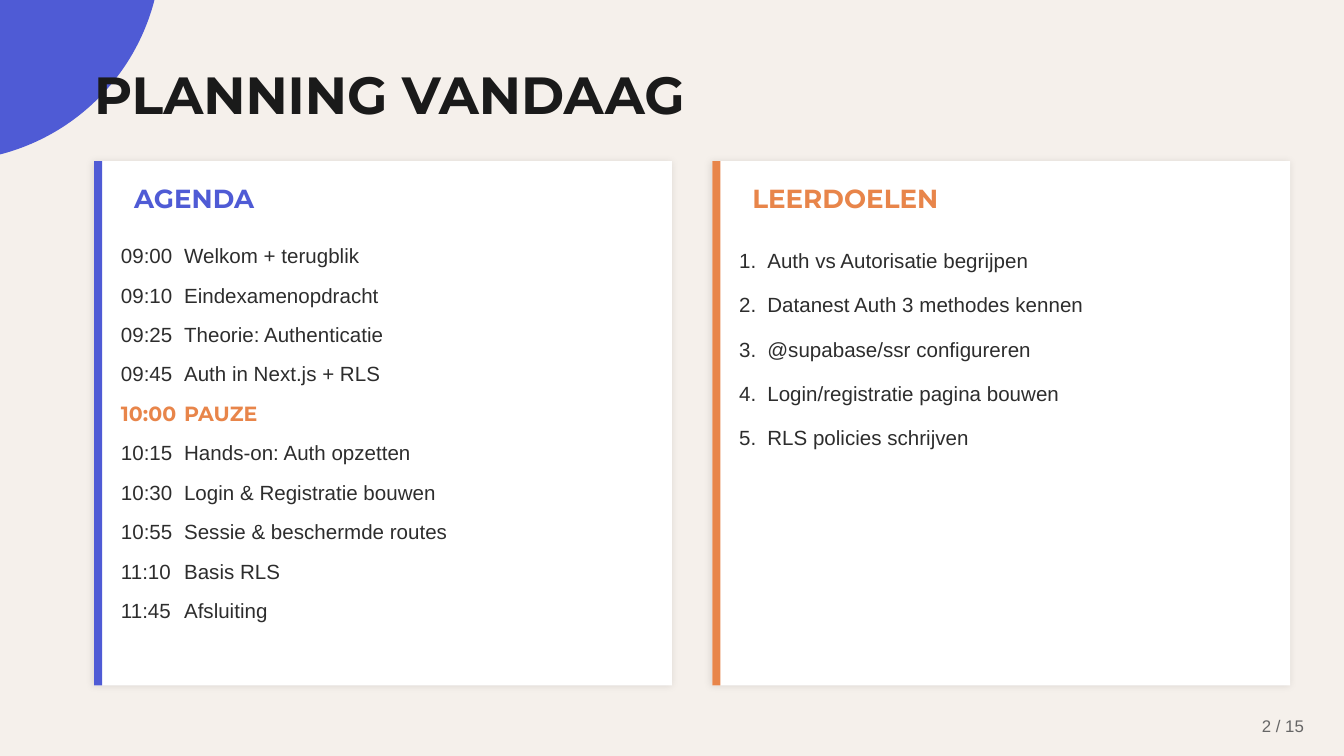
"""Build the day plan slide: an agenda card beside a card of goals."""
from dataclasses import dataclass

from lxml.etree import SubElement
from pptx import Presentation
from pptx.dml.color import RGBColor
from pptx.enum.shapes import MSO_SHAPE
from pptx.enum.text import MSO_ANCHOR, PP_ALIGN
from pptx.oxml.ns import qn
from pptx.shapes.autoshape import Shape
from pptx.slide import Slide
from pptx.text.text import TextFrame, _Paragraph as Para
from pptx.util import Inches, Pt

CELL = Inches(0.1)
CREAM = RGBColor(0xF5, 0xF0, 0xEB)
BLUE = RGBColor(0x4F, 0x5B, 0xD5)
ORANGE = RGBColor(0xE8, 0x85, 0x4A)
WHITE = RGBColor(0xFF, 0xFF, 0xFF)
BLACK = RGBColor(0x1A, 0x1A, 0x1A)
DARK = RGBColor(0x2D, 0x2D, 0x2D)
GRAY = RGBColor(0x66, 0x66, 0x66)


@dataclass(frozen=True)
class Box:
    """A place on the grid, in columns and rows."""
    col: float
    row: float
    wide: float
    high: float

    def span(self) -> list[int]:
        """Return left, top, width and height."""
        return [round(CELL * n) for n in (self.col, self.row, self.wide, self.high)]


@dataclass(frozen=True)
class Font:
    """The look of a run."""
    name: str
    size: float
    color: RGBColor
    bold: bool = False


@dataclass(frozen=True)
class Line:
    """One row of a list: its mark, its words and its font."""
    mark: str
    words: str
    font: Font = Font("Arial", 11, DARK)


@dataclass(frozen=True)
class Card:
    """A titled list with a coloured edge."""
    col: float
    title: str
    color: RGBColor
    lines: list[Line]
    tab: float
    pitch: float


PAUSE = Font("Montserrat", 11, ORANGE, True)
CARDS = [
    Card(7, "AGENDA", BLUE, [
        Line("09:00", "Welkom + terugblik"),
        Line("09:10", "Eindexamenopdracht"),
        Line("09:25", "Theorie: Authenticatie"),
        Line("09:45", "Auth in Next.js + RLS"),
        Line("10:00", "PAUZE", PAUSE),
        Line("10:15", "Hands-on: Auth opzetten"),
        Line("10:30", "Login & Registratie bouwen"),
        Line("10:55", "Sessie & beschermde routes"),
        Line("11:10", "Basis RLS"),
        Line("11:45", "Afsluiting"),
    ], 4.7, 1.6),
    Card(53, "LEERDOELEN", ORANGE, [
        Line(f"{rank}.", words) for rank, words in enumerate([
            "Auth vs Autorisatie begrijpen",
            "Datanest Auth 3 methodes kennen",
            "@supabase/ssr configureren",
            "Login/registratie pagina bouwen",
            "RLS policies schrijven",
        ], 1)
    ], 2.1, 1.8),
]


def add_block(slide: Slide, kind: MSO_SHAPE, box: Box, color: RGBColor) -> Shape:
    """Draw a plain filled shape."""
    shape = slide.shapes.add_shape(kind, *box.span())
    shape.shadow.inherit = False
    shape.fill.solid()
    shape.fill.fore_color.rgb = color
    shape.line.fill.background()
    return shape


def add_shade(shape: Shape) -> None:
    """Give a shape a soft outer shadow."""
    effects = shape._element.spPr.find(qn("a:effectLst"))
    shade = SubElement(effects, qn("a:outerShdw"), blurRad=str(Pt(4)), dist=str(Pt(1)),
                       dir=str(135 * 60000), algn="bl", rotWithShape="0")
    tint = SubElement(shade, qn("a:srgbClr"), val="000000")
    SubElement(tint, qn("a:alpha"), val="10000")


def add_frame(slide: Slide, box: Box, flush: bool = False,
              anchor: MSO_ANCHOR = MSO_ANCHOR.MIDDLE) -> TextFrame:
    """Add an empty text box that wraps."""
    frame = slide.shapes.add_textbox(*box.span()).text_frame
    frame.word_wrap = True
    frame.vertical_anchor = anchor
    if flush:
        frame.margin_left = frame.margin_right = 0
        frame.margin_top = frame.margin_bottom = 0
    return frame


def add_run(para: Para, text: str, font: Font) -> None:
    """Add a styled run."""
    run = para.add_run()
    run.text = text
    run.font.name = font.name
    run.font.size = Pt(font.size)
    run.font.bold = font.bold
    run.font.color.rgb = font.color


def add_label(slide: Slide, box: Box, text: str, font: Font,
              align: PP_ALIGN = PP_ALIGN.LEFT, flush: bool = False) -> None:
    """Add one line of text."""
    para = add_frame(slide, box, flush).paragraphs[0]
    para.alignment = align
    add_run(para, text, font)


def add_card(slide: Slide, card: Card) -> None:
    """Draw a card with its edge, title and list."""
    add_shade(add_block(slide, MSO_SHAPE.RECTANGLE, Box(card.col, 12, 43, 39), WHITE))
    add_block(slide, MSO_SHAPE.RECTANGLE, Box(card.col, 12, 0.6, 39), card.color)
    add_label(slide, Box(card.col + 2, 13, 30, 3.5), card.title,
              Font("Montserrat", 14, card.color, True))
    frame = add_frame(slide, Box(card.col + 2, 17, 39, 32), True, MSO_ANCHOR.TOP)
    for index, line in enumerate(card.lines):
        para = frame.add_paragraph() if index else frame.paragraphs[0]
        para.line_spacing = card.pitch
        tabs = SubElement(para._p.get_or_add_pPr(), qn("a:tabLst"))
        SubElement(tabs, qn("a:tab"), pos=str(round(CELL * card.tab)), algn="l")
        add_run(para, f"{line.mark}\t{line.words}", line.font)


def main() -> None:
    """Build and save the slide."""
    deck = Presentation()
    deck.slide_width = Inches(10)
    deck.slide_height = deck.slide_width * 9 // 16
    slide = deck.slides.add_slide(deck.slide_layouts[6])
    slide.background.fill.solid()
    slide.background.fill.fore_color.rgb = CREAM
    add_block(slide, MSO_SHAPE.OVAL, Box(-20, -20, 32, 32), BLUE)
    add_label(slide, Box(7, 4, 85, 6), "PLANNING VANDAAG",
              Font("Montserrat", 28, BLACK, True), flush=True)
    add_label(slide, Box(90, 52.5, 8, 3), "2 / 15", Font("Arial", 9, GRAY), PP_ALIGN.RIGHT)
    for card in CARDS:
        add_card(slide, card)
    deck.save("out.pptx")


if __name__ == "__main__":
    main()
